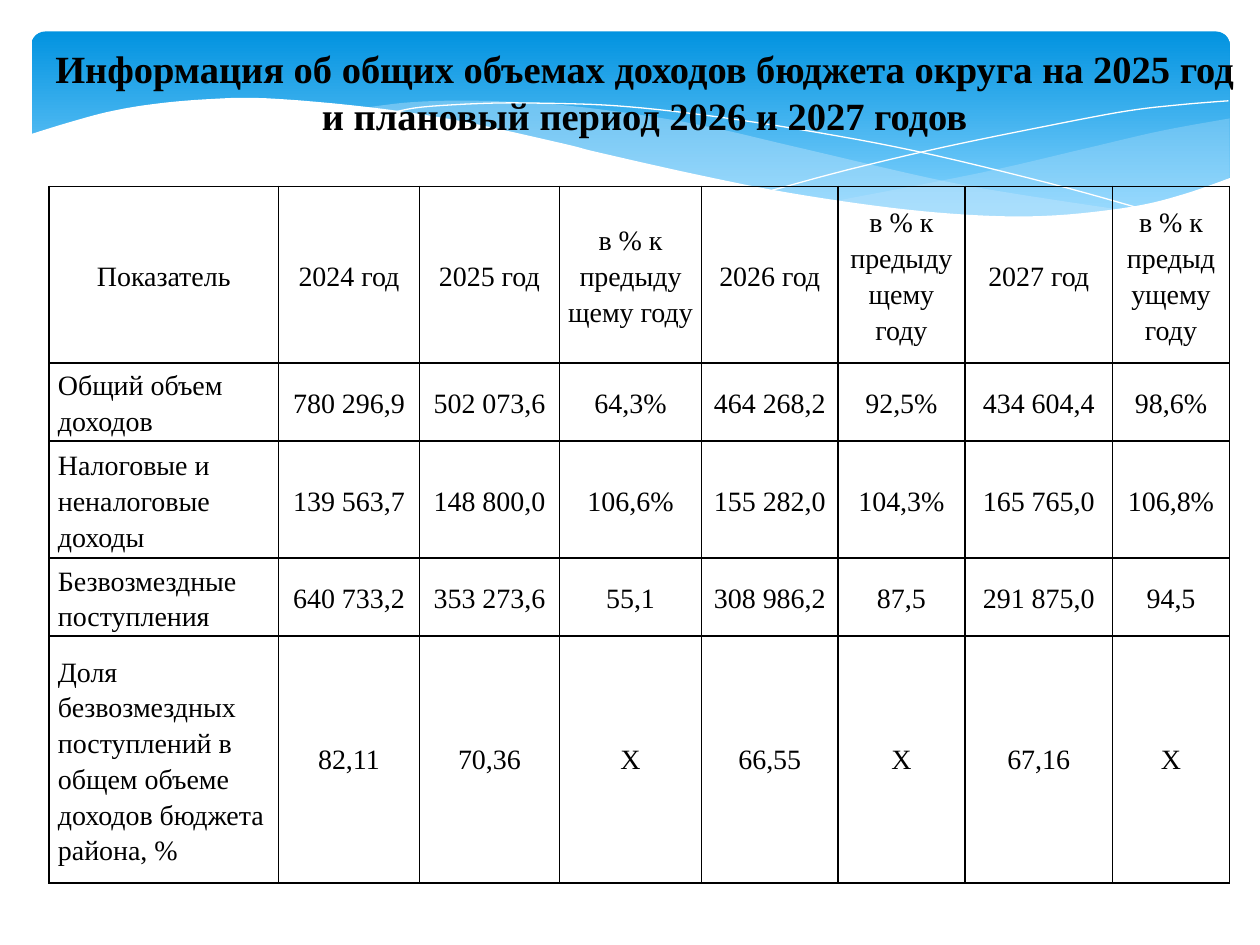
from dataclasses import dataclass
from lxml.etree import SubElement as Sub
from pptx import Presentation
from pptx.dml.color import RGBColor as Rgb
from pptx.enum.shapes import MSO_SHAPE as Kind
from pptx.enum.text import MSO_ANCHOR as Anchor, MSO_AUTO_SIZE as Fit, PP_ALIGN as Align
from pptx.oxml import parse_xml
from pptx.oxml.ns import qn, nsdecls
from pptx.util import Inches, Pt


@dataclass(frozen=True)
class Theme:
    """Colours, type sizes and the grid unit."""
    font: str = "Times New Roman"
    ink: str = "000000"
    paper: str = "FFFFFF"
    deep: str = "0293E0"
    sky: str = "83D3FE"
    mist: str = "C6E7FC"
    head: int = 22
    body: int = 16
    unit: int = Inches(0.01)


THEME = Theme()
BAND = (25, 25, 951, 156)
TITLE = (23, 31, 977, 84)
GRID = (39, 148, 938, 553)
COLS = (182, 112, 111, 113, 108, 101, 117, 93)
ROWS = (140, 62, 93, 62, 196)
SHARE = "в % к предыдущему году"
HEAD = "Информация об общих объемах доходов бюджета округа на 2025 год и плановый период 2026 и 2027 годов"
DATA = (
    ("Показатель", "2024 год", "2025 год", "в % к предыду\nщему году",
     "2026 год", SHARE, "2027 год", SHARE),
    ("Общий объем доходов", "780 296,9", "502 073,6", "64,3%",
     "464 268,2", "92,5%", "434 604,4", "98,6%"),
    ("Налоговые и неналоговые доходы", "139 563,7", "148 800,0", "106,6%",
     "155 282,0", "104,3%", "165 765,0", "106,8%"),
    ("Безвозмездные поступления", "640 733,2", "353 273,6", "55,1",
     "308 986,2", "87,5", "291 875,0", "94,5"),
    ("Доля безвозмездных поступлений в общем объеме доходов бюджета района, %",
     "82,11", "70,36", "Х", "66,55", "Х", "67,16", "Х"),
)
RIGHT = (
    ((951, 69), (896, 79), (836, 93), (754, 112), (636, 135)),
    ((636, 135), (694, 142), (756, 146), (810, 147), (856, 144), (903, 135), (951, 116)),
)
MIDDLE = (
    ((868, 142), (782, 129), (716, 117), (604, 91), (544, 77), (489, 67),
     (417, 58), (355, 55), (303, 56), (261, 61)),
    ((261, 61), (317, 69), (379, 81), (424, 91), (541, 118), (609, 131),
     (670, 140), (736, 146), (793, 148), (842, 146), (868, 142)),
)
FALL = (((284, 65), (310, 60), (362, 57), (408, 57), (464, 59), (531, 66),
         (611, 78), (702, 95), (806, 120), (882, 141)),)
RISE = (((588, 126), (647, 110), (723, 92), (811, 74), (870, 63), (913, 58), (950, 55)),)
FRONT = (
    ((952, 116), (915, 129), (874, 139), (812, 146), (753, 146), (683, 140),
     (601, 128), (530, 114), (450, 96), (422, 89), (340, 71), (267, 60),
     (186, 53), (136, 54), (94, 58), (60, 64), (27, 73), (-2, 82)),
    ((-2, 199), (952, 199)),
)


def tint(code):
    """Turn a hex code into a colour."""
    return Rgb.from_string(code)


def scale(nums):
    """Turn grid units into slide lengths."""
    return [round(num * THEME.unit) for num in nums]


def smooth(edge, steps=6):
    """Run a Catmull-Rom curve through the points of an edge."""
    pts = (edge[0], *edge, edge[-1])
    for a, b, c, d in zip(pts, pts[1:], pts[2:], pts[3:]):
        for t in (step / steps for step in range(steps)):
            yield tuple(
                (2 * q + (r - p) * t + (2 * p - 5 * q + 4 * r - s) * t ** 2
                 + (3 * q - p - 3 * r + s) * t ** 3) / 2
                for p, q, r, s in zip(a, b, c, d))
    yield edge[-1]


def wave(shapes, box, edges, fill=None, alpha=None):
    """Draw a filled wave, or a thin arc when no fill is given."""
    left, top = box[:2]
    pts = [scale((left + x, top + y)) for edge in edges for x, y in smooth(edge)]
    pen = shapes.build_freeform(*pts[0], scale=1.0)
    pen.add_line_segments(pts[1:], close=bool(fill))
    shape = pen.convert_to_shape()
    shape.shadow.inherit = False
    if not fill:
        shape.fill.background()
        shape.line.color.rgb = tint(THEME.paper)
        shape.line.width = Pt(0)
        return
    shape.line.fill.background()
    shape.fill.solid()
    shape.fill.fore_color.rgb = tint(fill)
    if alpha:
        hue = next(shape.element.iter(qn("a:srgbClr")))
        Sub(hue, qn("a:alpha"), val=str(alpha * 1000))


def banner(shapes, box):
    """Draw the blue band with its waves."""
    band = shapes.add_shape(Kind.ROUNDED_RECTANGLE, *scale(box))
    band.adjustments[0] = 0.07
    band.shadow.inherit = False
    band.line.fill.background()
    band.fill.gradient()
    band.fill.gradient_angle = 270
    for stop, spot, code in zip(band.fill.gradient_stops, (0, 0.9), (THEME.deep, THEME.sky)):
        stop.position = spot
        stop.color.rgb = tint(code)
    wave(shapes, box, RIGHT, THEME.mist, 29)
    wave(shapes, box, MIDDLE, THEME.mist, 40)
    wave(shapes, box, FALL)
    wave(shapes, box, RISE)
    wave(shapes, box, FRONT, THEME.paper)


def style(para, size, align, bold=False):
    """Set the type of a paragraph."""
    para.alignment = align
    font = para.font
    font.name, font.size, font.bold = THEME.font, Pt(size), bold
    font.color.rgb = tint(THEME.ink)


def frame(cell):
    """Give a cell thin borders on all sides."""
    props = cell._tc.get_or_add_tcPr()
    for spot, side in enumerate("LRTB"):
        props.insert(spot, parse_xml(
            f'<a:ln{side} {nsdecls("a")} w="12700"><a:solidFill>'
            f'<a:srgbClr val="{THEME.ink}"/></a:solidFill></a:ln{side}>'))


def table(shapes, box):
    """Place the income table."""
    grid = shapes.add_table(len(ROWS), len(COLS), *scale(box)).table
    grid.first_row = grid.horz_banding = False
    for col, width in zip(grid.columns, scale(COLS)):
        col.width = width
    for row, height in zip(grid.rows, scale(ROWS)):
        row.height = height
    for r, texts in enumerate(DATA):
        for c, text in enumerate(texts):
            cell = grid.cell(r, c)
            cell.text = text
            cell.fill.background()
            frame(cell)
            tight = c > 0 and r == len(ROWS) - 1
            cell.vertical_anchor = Anchor.MIDDLE
            cell.margin_left = cell.margin_right = Inches(0.01 if tight else 0.07)
            cell.margin_top = cell.margin_bottom = 0
            for para in cell.text_frame.paragraphs:
                style(para, THEME.body, Align.CENTER if r == 0 or c else Align.LEFT)
                para.line_spacing = 1.0 if tight else 1.15


def title(shapes, box):
    """Fill the title and bring it to the front."""
    head = shapes.title
    head.left, head.top, head.width, head.height = scale(box)
    text = head.text_frame
    text.text = HEAD
    text.word_wrap = True
    text.auto_size = Fit.NONE
    text.vertical_anchor = Anchor.TOP
    style(text.paragraphs[0], THEME.head, Align.CENTER, True)
    shapes._spTree.append(head.element)


def main():
    """Build and save the slide."""
    deck = Presentation()
    deck.slide_width, deck.slide_height = Inches(10), Inches(7.5)
    shapes = deck.slides.add_slide(deck.slide_layouts[5]).shapes
    banner(shapes, BAND)
    table(shapes, GRID)
    title(shapes, TITLE)
    deck.save("out.pptx")


if __name__ == "__main__":
    main()
